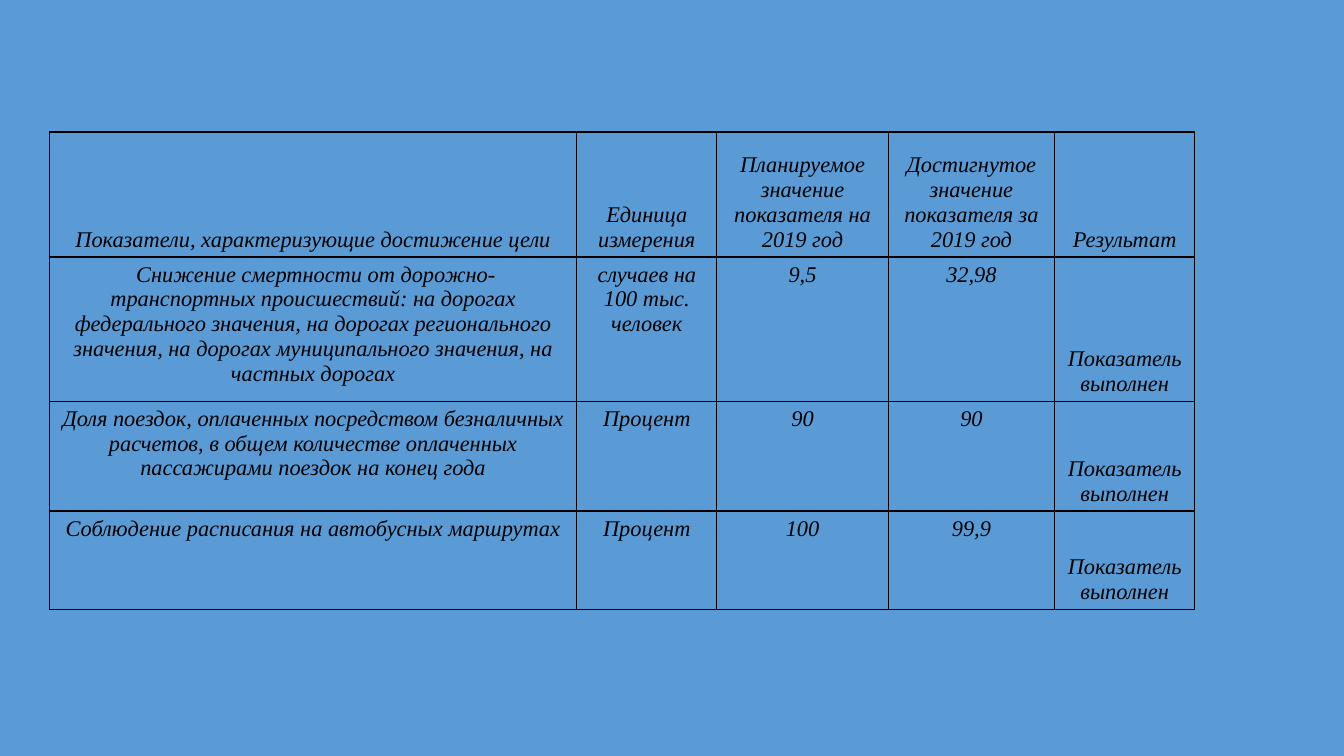
from dataclasses import dataclass

from lxml.etree import SubElement
from pptx import Presentation
from pptx.dml.color import RGBColor
from pptx.enum.text import MSO_ANCHOR, PP_ALIGN
from pptx.oxml.ns import qn
from pptx.table import _Cell
from pptx.util import Inches, Pt

BLUE = RGBColor(0x5B, 0x9B, 0xD5)
BLACK = RGBColor(0x00, 0x00, 0x00)
FONT_FORMAT = {"name": "Times New Roman", "size": Pt(16), "italic": True, "bold": False}
BORDER_SIDES = ("a:lnL", "a:lnR", "a:lnT", "a:lnB")
COLUMN_WIDTHS = (5.23, 1.39, 1.7, 1.65, 1.39)
DONE = "Показатель выполнен"


@dataclass(frozen=True)
class Indicator:
    height: float
    name: str
    unit: str
    planned: str
    achieved: str
    result: str = DONE

    def texts(self) -> tuple[str, ...]:
        return self.name, self.unit, self.planned, self.achieved, self.result


ROWS = (
    Indicator(
        1.24,
        "Показатели, характеризующие достижение цели",
        "Единица измерения",
        "Планируемое значение показателя на 2019 год",
        "Достигнутое значение показателя за 2019 год",
        "Результат",
    ),
    Indicator(
        1.43,
        " Снижение смертности от дорожно-транспортных происшествий: "
        "на дорогах федерального значения, на дорогах регионального значения, "
        "на дорогах муниципального значения, на частных дорогах",
        "случаев на 100 тыс. человек",
        "9,5",
        "32,98",
    ),
    Indicator(
        1.09,
        "Доля поездок, оплаченных посредством безналичных расчетов, "
        "в общем количестве оплаченных пассажирами поездок на конец года",
        "Процент",
        "90",
        "90",
    ),
    Indicator(0.98, "Соблюдение расписания на автобусных маршрутах", "Процент", "100", "99,9"),
)


def draw_borders(cell: _Cell) -> None:
    properties = cell._tc.get_or_add_tcPr()
    for side in BORDER_SIDES:
        line = SubElement(properties, qn(side), w=str(Pt(1)))
        fill = SubElement(line, qn("a:solidFill"))
        SubElement(fill, qn("a:srgbClr"), val=str(BLACK))


def fill_cell(cell: _Cell, text: str, anchor: MSO_ANCHOR) -> None:
    draw_borders(cell)
    cell.fill.background()
    cell.vertical_anchor = anchor
    para = cell.text_frame.paragraphs[0]
    para.alignment = PP_ALIGN.CENTER
    span = para.add_run()
    span.text = text
    for attribute, value in FONT_FORMAT.items():
        setattr(span.font, attribute, value)
    span.font.color.rgb = BLACK


def main() -> None:
    deck = Presentation()
    deck.slide_width, deck.slide_height = Inches(13.33), Inches(7.5)
    page = deck.slides.add_slide(deck.slide_layouts[6])
    page.background.fill.solid()
    page.background.fill.fore_color.rgb = BLUE

    table = page.shapes.add_table(
        len(ROWS),
        len(COLUMN_WIDTHS),
        Inches(0.49),
        Inches(1.31),
        Inches(sum(COLUMN_WIDTHS)),
        Inches(sum(row.height for row in ROWS)),
    ).table
    table.horz_banding = False
    table.first_row = False
    for column, width in zip(table.columns, COLUMN_WIDTHS):
        column.width = Inches(width)
    for row_index, indicator in enumerate(ROWS):
        table.rows[row_index].height = Inches(indicator.height)
        for column_index, text in enumerate(indicator.texts()):
            at_bottom = row_index == 0 or column_index == len(COLUMN_WIDTHS) - 1
            anchor = MSO_ANCHOR.BOTTOM if at_bottom else MSO_ANCHOR.TOP
            fill_cell(table.cell(row_index, column_index), text, anchor)

    deck.save("out.pptx")


if __name__ == "__main__":
    main()
